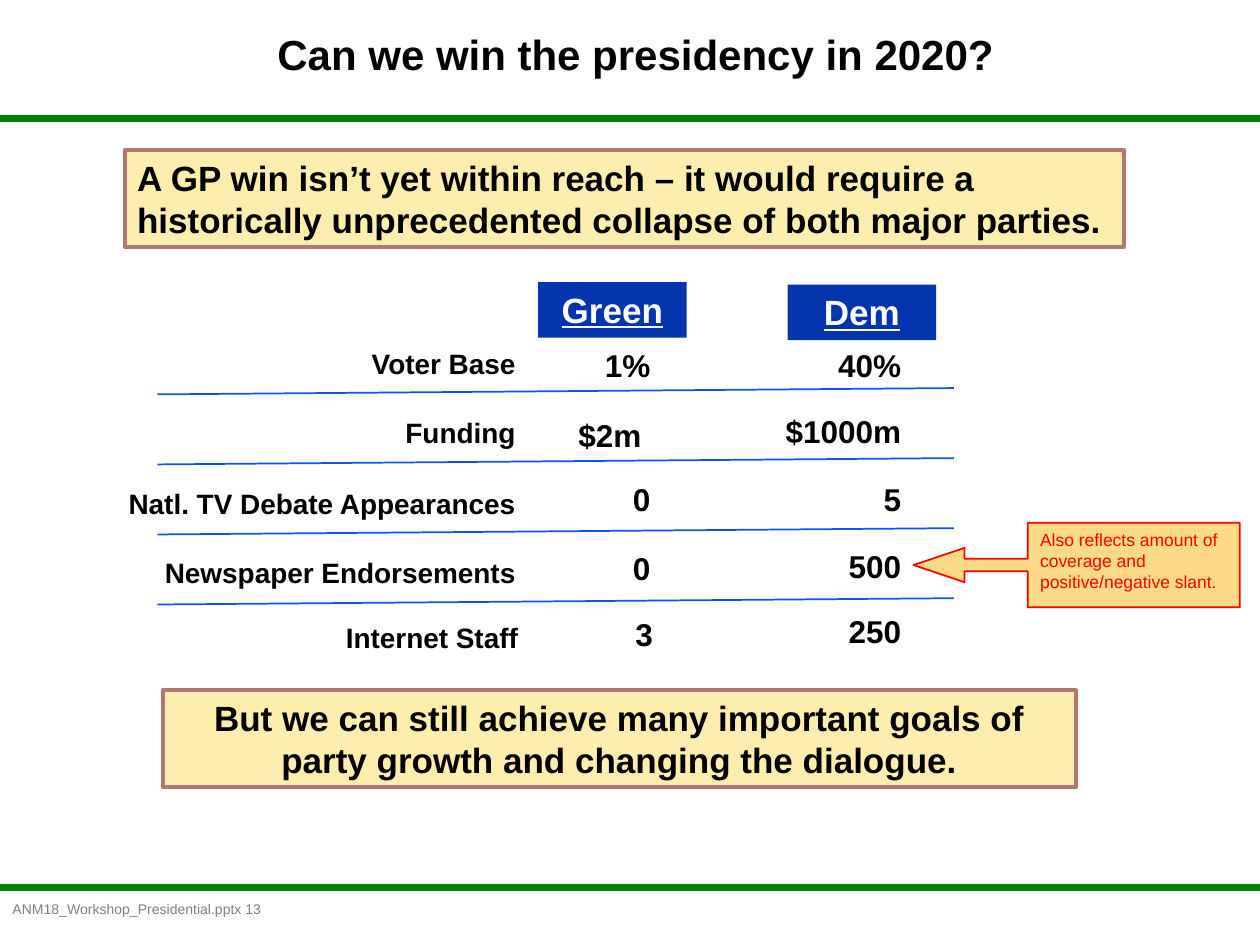
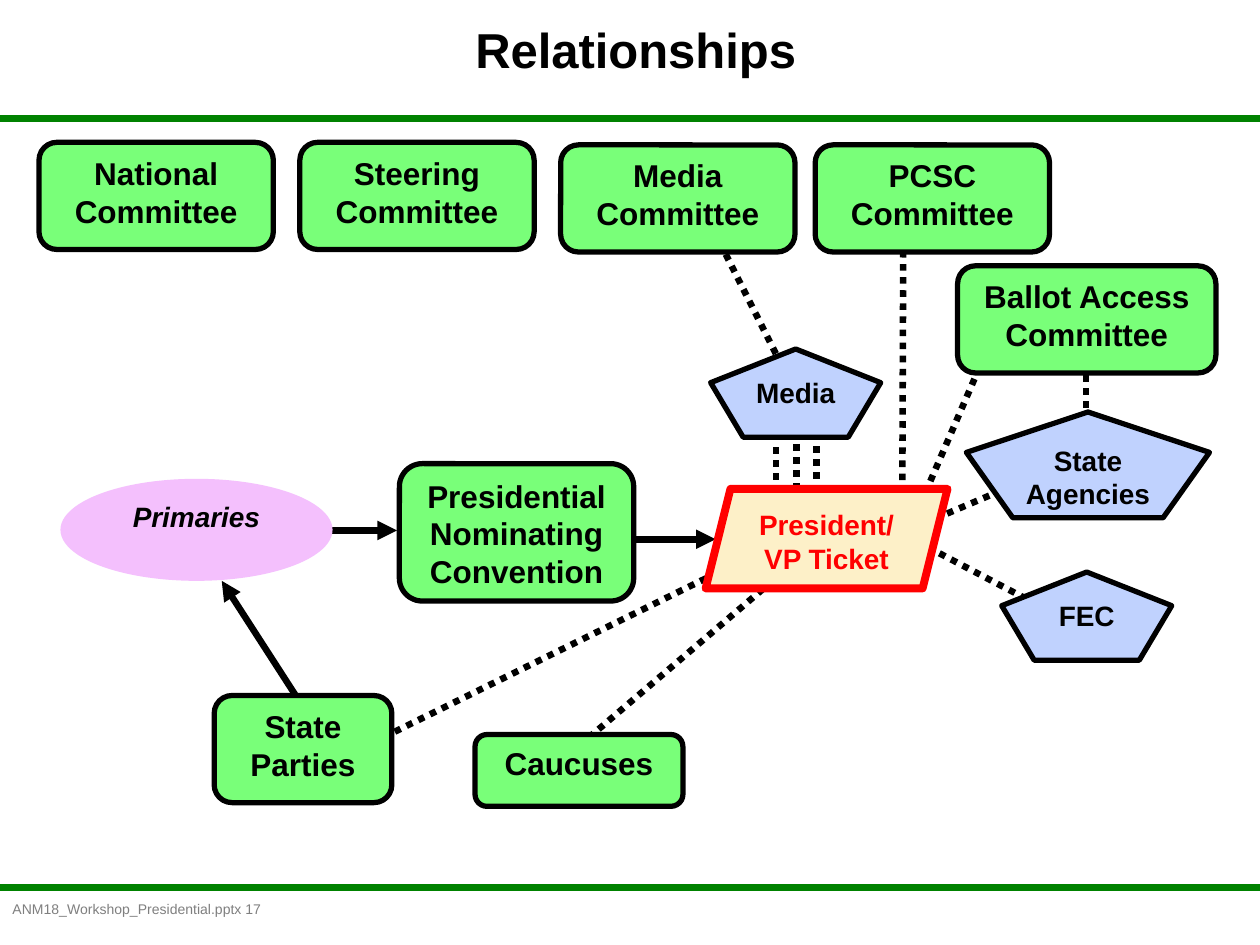
from pptx import Presentation
from pptx.dml.color import RGBColor
from pptx.enum.dml import MSO_LINE as Dash
from pptx.enum.shapes import MSO_CONNECTOR as Conn, MSO_SHAPE as Geo
from pptx.enum.text import MSO_ANCHOR as Anchor, MSO_AUTO_SIZE as Fit, PP_ALIGN as Align
from pptx.oxml.ns import qn
from pptx.util import Inches, Pt
from lxml.etree import SubElement

# Shared look
FONT = "Arial"
BLACK = RGBColor(0x00, 0x00, 0x00)
WHITE = RGBColor(0xFF, 0xFF, 0xFF)
GRAY = RGBColor(0x7F, 0x7F, 0x7F)
RED = RGBColor(0xFF, 0x00, 0x00)
BAND = RGBColor(0x00, 0x82, 0x00)
CREAM = RGBColor(0xFD, 0xEE, 0xAE)
BROWN = RGBColor(0xB1, 0x78, 0x71)
NAVY = RGBColor(0x02, 0x34, 0xAD)
BLUE = RGBColor(0x0B, 0x52, 0xFC)
GOLD = RGBColor(0xFD, 0xDB, 0x86)
GREEN = RGBColor(0x79, 0xFF, 0x79)
PINK = RGBColor(0xF4, 0xC0, 0xFD)
SAND = RGBColor(0xFD, 0xF0, 0xC8)
SKY = RGBColor(0xC0, 0xD2, 0xFE)


def write(shape, text, size, color=BLACK, align=Align.CENTER, bold=True):
    frame = shape.text_frame
    frame.word_wrap = True
    frame.vertical_anchor = Anchor.TOP
    para = frame.paragraphs[0]
    para.text = text
    para.alignment = align
    font = para.font
    font.name, font.size, font.bold = FONT, Pt(size), bold
    font.color.rgb = color
    return para


def label(slide, box, text, size, **style):
    shape = slide.shapes.add_textbox(*map(Inches, box))
    return write(shape, text, size, **style)


def block(slide, kind, box, fill, edge=None, width=1):
    shape = slide.shapes.add_shape(kind, *map(Inches, box))
    shape.shadow.inherit = False
    shape.fill.solid()
    shape.fill.fore_color.rgb = fill
    if edge is None:
        shape.line.fill.background()
    else:
        shape.line.color.rgb = edge
        shape.line.width = Pt(width)
    return shape


def rule(slide, start, end, color, width, arrow=False, dots=False):
    line = slide.shapes.add_connector(Conn.STRAIGHT, *map(Inches, start + end))
    line.line.color.rgb = color
    line.line.width = Pt(width)
    if dots:
        line.line.dash_style = Dash.ROUND_DOT
    props = line._element.spPr
    if arrow:
        SubElement(props.find(qn("a:ln")), qn("a:tailEnd"), type="triangle")
    SubElement(props, qn("a:effectLst"))


def start(deck, text, size, page):
    """Add a slide with its title, two bands and footer."""
    slide = deck.slides.add_slide(deck.slide_layouts[5])
    for y in (0.94, 7.04):
        rule(slide, (0, y), (10, y), BAND, 4)
    foot = label(slide, (0, 7.11, 2.21, 0.22), f"ANM18_Workshop_Presidential.pptx {page}",
                 8, color=GRAY, align=Align.LEFT, bold=False)
    foot.line_spacing = 0.9
    title = slide.shapes.title
    title.left, title.top, title.width, title.height = map(Inches, (1.17, 0, 7.75, 0.83))
    write(title, text, size).line_spacing = Pt(30)
    title.text_frame.auto_size = Fit.NONE
    title.text_frame.vertical_anchor = Anchor.MIDDLE
    return slide


# Slide with the party comparison
ROWS = [  # name, Green value, Dem value, then the top of each
    ("Voter Base", "1%", "40%", 0.46, 0.46, 0.46),
    ("Funding", "$2m", "$1000m", 1.01, 1.01, 0.98),
    ("Natl. TV Debate Appearances", "0", "5", 1.57, 1.52, 1.52),
    ("Newspaper Endorsements", "0", "500", 2.12, 2.07, 2.05),
    ("Internet Staff", "3", "250", 2.64, 2.59, 2.57),
]
NUDGE = {"$2m": -0.07, "3": 0.02, "Internet Staff": 0.02}


def banner(slide, box, text, align):
    write(block(slide, Geo.RECTANGLE, box, CREAM, BROWN, 2.25), text, 20, align=align)


def compare(slide, left, top):
    # Column heads
    for text, x, y in (("Green", 3.4, 0), ("Dem", 5.38, 0.02)):
        head = block(slide, Geo.RECTANGLE, (left + x, top + y, 1.18, 0.44), NAVY)
        write(head, text, 20, WHITE).font.underline = True
    # Right-aligned cells: right edge, width, height, size
    cols = ((3.32, 3.32, 0.37, 16), (4.39, 0.83, 0.4, 18), (6.38, 1.24, 0.4, 18))
    for row in ROWS:
        for text, y, (right, wide, high, size) in zip(row[:3], row[3:], cols):
            x = left + right - wide + NUDGE.get(text, 0)
            label(slide, (x, top + y, wide, high), text, size, align=Align.RIGHT)
    # Slightly rising row rules
    for i in range(len(ROWS) - 1):
        y = top + 0.89 + i * 0.556
        rule(slide, (left + 0.38, y), (left + 6.7, y - 0.05), BLUE, 1)


def remark(slide, box, text):
    note = block(slide, Geo.LEFT_ARROW_CALLOUT, box, GOLD, RED)
    for i, ratio in enumerate((0.149, 0.203, 0.604, 0.65)):
        note.adjustments[i] = ratio
    write(note, text, 10, RED, Align.LEFT, False)


def contest(deck):
    slide = start(deck, "Can we win the presidency in 2020?", 24, 13)
    banner(slide, (0.99, 1.19, 7.93, 0.77),
           "A GP win isn’t yet within reach – it would require a historically "
           "unprecedented collapse of both major parties.", Align.LEFT)
    compare(slide, 0.87, 2.24)
    remark(slide, (7.25, 4.15, 2.59, 0.67),
           "Also reflects amount of coverage and positive/negative slant.")
    banner(slide, (1.29, 5.48, 7.25, 0.77),
           "But we can still achieve many important goals of party growth "
           "and changing the dialogue.", Align.CENTER)


# Slide with the relationship map
DOTTED = [
    ((6.16, 3.34), (6.16, 4.23)), ((6.48, 3.23), (6.48, 4.12)),
    ((7.94, 2.53), (7.09, 4.5)), ((6.53, 4.27), (4.35, 6.13)),
    ((6.07, 4.36), (2.64, 6.05)), ((7.17, 1.68), (7.16, 4.33)),
    ((5.62, 1.74), (6.31, 3.11)), ((6.32, 3.42), (6.32, 4.32)),
    ((8.33, 4.85), (6.92, 4.11)), ((8.33, 3.73), (6.92, 4.33)),
    ((8.62, 2.77), (8.62, 3.68)),
]
SOLID = [
    ((4.92, 4.28), (5.68, 4.28)), ((2.39, 4.21), (3.15, 4.21)),
    ((2.45, 5.68), (1.76, 4.61)),
]
GROUPS = [
    ("National Committee", (0.31, 1.13, 1.86, 0.85)),
    ("Steering Committee", (2.38, 1.13, 1.86, 0.85)),
    ("Media Committee", (4.45, 1.15, 1.86, 0.85)),
    ("PCSC Committee", (6.47, 1.15, 1.86, 0.85)),
    ("Ballot Access Committee", (7.6, 2.11, 2.05, 0.85)),
    ("State Parties", (1.7, 5.52, 1.41, 0.85)),
    ("Caucuses", (3.77, 5.83, 1.65, 0.57)),
    ("Presidential Nominating Convention", (3.17, 3.68, 1.86, 1.09)),
]
OUTSIDE = [
    ("FEC", (7.95, 4.54, 1.35, 0.7)),
    ("State Agencies", (7.67, 3.27, 1.93, 0.84)),
    ("Media", (5.64, 2.77, 1.35, 0.7)),
]


def links(slide):
    for ends, dots in ((DOTTED, True), (SOLID, False)):
        for tail, head in ends:
            rule(slide, tail, head, BLACK, 3.75, arrow=True, dots=dots)


def nodes(slide):
    for items, kind, fill, size in ((GROUPS, Geo.ROUNDED_RECTANGLE, GREEN, 18),
                                    (OUTSIDE, Geo.REGULAR_PENTAGON, SKY, 16)):
        for text, box in items:
            write(block(slide, kind, box, fill, BLACK, 3), text, size)
    oval = block(slide, Geo.OVAL, (0.48, 3.8, 2.16, 0.81), PINK)
    write(oval, "Primaries", 16).font.italic = True
    ticket = block(slide, Geo.PARALLELOGRAM, (5.6, 3.88, 1.92, 0.79), SAND, RED, 4.5)
    write(ticket, "President/ VP Ticket", 16, RED)


def network(deck):
    slide = start(deck, "Relationships", 28, 17)
    links(slide)
    nodes(slide)


def main():
    deck = Presentation()
    deck.slide_width, deck.slide_height = Inches(10), Inches(7.5)
    contest(deck)
    network(deck)
    deck.save("out.pptx")


if __name__ == "__main__":
    main()
